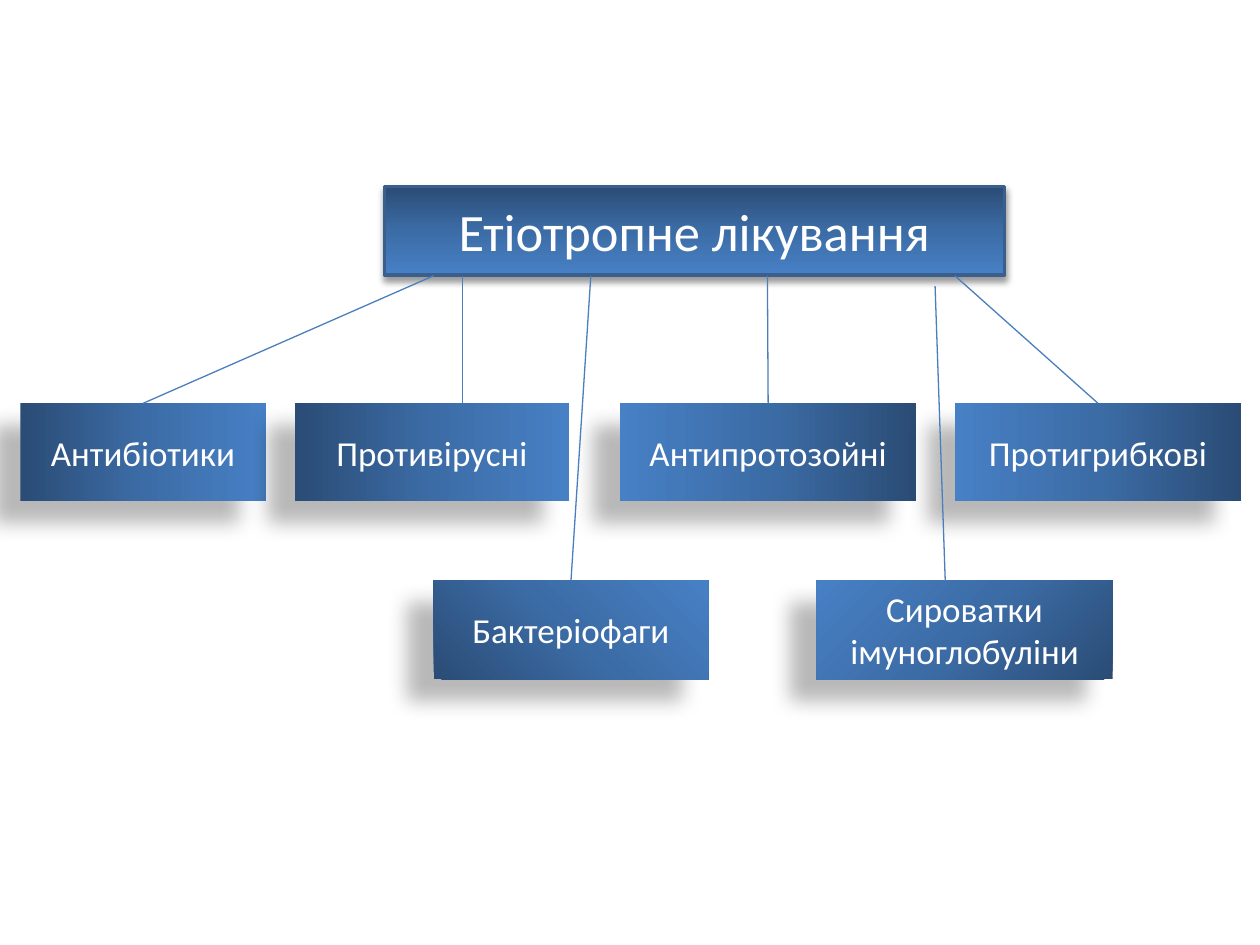
from copy import deepcopy

from lxml import etree
from pptx import Presentation
from pptx.dml.color import RGBColor
from pptx.enum.shapes import MSO_CONNECTOR, MSO_SHAPE
from pptx.enum.text import MSO_ANCHOR, MSO_AUTO_SIZE, PP_ALIGN
from pptx.oxml.ns import qn
from pptx.util import Cm, Pt

STRAIGHT = MSO_CONNECTOR.STRAIGHT
RECTANGLE = MSO_SHAPE.RECTANGLE
MIDDLE = MSO_ANCHOR.MIDDLE
NO_FIT = MSO_AUTO_SIZE.NONE
CENTER = PP_ALIGN.CENTER

FONT = "Calibri"
COLORS = {"text": "FFFFFF", "title border": "3A5F8C", "link": "4B7EBC", "shadow": "000000"}
GRADIENT = [(0, "2A4C75"), (0.5, "3C6CA6"), (1, "4780C5")]

# Shadows: opacity in percent, blur and distance in points, direction in degrees
TITLE_SHADOW = (40, 4, 3, 90)
BOX_SHADOW = (28, 11.8, 19.7, 141)

# Positions in centimetres
TITLE = "Етіотропне лікування"
TITLE_AREA = (7.75, 3.76, 12.5, 1.78)
BOX_HEIGHT = 1.98
UPPER_ROW, LOWER_ROW = 8.13, 11.71
LINK_TOP = 5.56

# Text, left, top, width, gradient angle (clockwise)
BOXES = [
    ("Антибіотики", 0.41, UPPER_ROW, 4.95, 0),
    ("Противірусні", 5.94, UPPER_ROW, 5.54, 0),
    ("Антипротозойні", 12.5, UPPER_ROW, 5.97, 180),
    ("Бактеріофаги", 8.74, LOWER_ROW, 5.54, 315),
    ("Сироватки імуноглобуліни", 16.46, LOWER_ROW, 5.97, 225),
    ("Протигрибкові", 19.25, UPPER_ROW, 5.77, 180),
]
# For each box: start x, start y, shift of the end from the box centre
LINKS = [
    (8.74, LINK_TOP, 0),
    (9.32, LINK_TOP, 0.61),
    (15.47, LINK_TOP, 0),
    (11.91, LINK_TOP, 0),
    (18.85, 5.77, -0.39),
    (19.25, LINK_TOP, 0),
]


def rgb(name):
    return RGBColor.from_string(COLORS[name])


def fill_gradient(shape, angle):
    fill = shape.fill
    fill.gradient()
    fill.gradient_angle = -angle % 360
    stop_list = next(shape._element.spPr.iter(qn("a:gsLst")))
    stop_list.append(deepcopy(stop_list[0]))
    for stop, (position, color) in zip(fill.gradient_stops, GRADIENT):
        stop.position = position
        stop.color.rgb = RGBColor.from_string(color)


def add_shadow(shape, opacity, blur, distance, direction):
    shape.shadow.inherit = False
    effects = shape._element.spPr.find(qn("a:effectLst"))
    shadow = etree.SubElement(
        effects, qn("a:outerShdw"), blurRad=str(Pt(blur)), dist=str(Pt(distance)),
        dir=str(direction * 60000), algn="ctr", rotWithShape="0")
    color = etree.SubElement(shadow, qn("a:srgbClr"), val=COLORS["shadow"])
    etree.SubElement(color, qn("a:alpha"), val=str(opacity * 1000))


def write_text(shape, text, size):
    frame = shape.text_frame
    frame.text = text
    frame.word_wrap = True
    frame.auto_size = NO_FIT
    frame.vertical_anchor = MIDDLE
    paragraph = frame.paragraphs[0]
    paragraph.alignment = CENTER
    paragraph.font.name = FONT
    paragraph.font.size = Pt(size)
    paragraph.font.color.rgb = rgb("text")


def add_title(slide):
    title = slide.shapes.title
    title.left, title.top, title.width, title.height = map(Cm, TITLE_AREA)
    fill_gradient(title, 90)
    title.line.color.rgb = rgb("title border")
    title.line.width = Pt(2)
    # A title placeholder offers no shadow object until its effect list exists
    add_shadow(title, *TITLE_SHADOW)
    write_text(title, TITLE, 30)


def add_box(slide, text, left, top, width, angle):
    box = slide.shapes.add_shape(RECTANGLE, Cm(left), Cm(top), Cm(width), Cm(BOX_HEIGHT))
    fill_gradient(box, angle)
    box.line.fill.background()
    add_shadow(box, *BOX_SHADOW)
    write_text(box, text, 20)


def add_link(slide, start_x, start_y, end_x, end_y):
    link = slide.shapes.add_connector(STRAIGHT, Cm(start_x), Cm(start_y), Cm(end_x), Cm(end_y))
    link.line.color.rgb = rgb("link")
    link.line.width = Pt(0.75)
    etree.SubElement(link._element.spPr, qn("a:effectLst"))


def main():
    presentation = Presentation()
    presentation.slide_width, presentation.slide_height = Cm(25.4), Cm(19.05)
    slide = presentation.slides.add_slide(presentation.slide_layouts.get_by_name("Title Only"))

    # Heading and treatment groups
    add_title(slide)
    for box in BOXES:
        add_box(slide, *box)

    # Lines from the heading to each group
    for (_, left, top, width, _), (start_x, start_y, shift) in zip(BOXES, LINKS):
        add_link(slide, start_x, start_y, left + width / 2 + shift, top)

    presentation.save("out.pptx")


if __name__ == "__main__":
    main()
